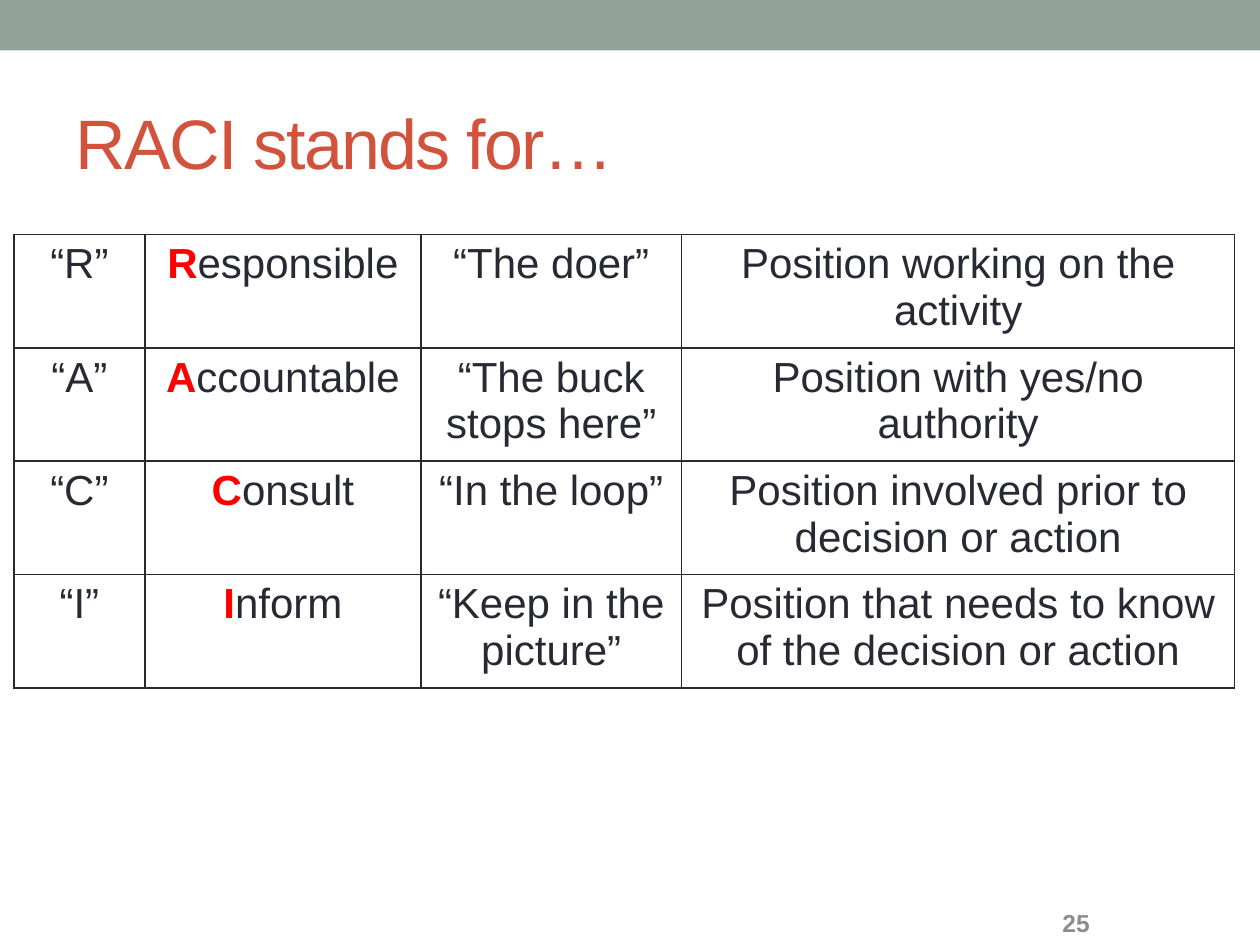
from lxml import etree
from pptx import Presentation
from pptx.dml.color import RGBColor
from pptx.enum import shapes, text
from pptx.oxml.ns import qn
from pptx.util import Pt

FONT = "Arial"
INK = "292934"
RED = "FF0000"
COLUMN_WIDTHS = [74.9, 157.7, 149, 316.1]
ROW_HEIGHT = 60.75
ROLES = [
    ("Responsible", "“The doer”", "Position working on the activity"),
    ("Accountable", "“The buck stops here”", "Position with yes/no authority"),
    ("Consult", "“In the loop”", "Position involved prior to decision or action"),
    ("Inform", "“Keep in the picture”",
     "Position that needs to know of the decision or action"),
]


def color(hex_code):
    return RGBColor.from_string(hex_code)


def format_span(span, size, hex_code, bold=False):
    span.font.name = FONT
    span.font.size = Pt(size)
    span.font.bold = bold
    span.font.color.rgb = color(hex_code)


def place(shape, left, top, width, height):
    shape.left, shape.top = Pt(left), Pt(top)
    shape.width, shape.height = Pt(width), Pt(height)


def add_band(page):
    band = page.shapes.add_shape(
        shapes.MSO_SHAPE.RECTANGLE, 0, 0, Pt(720), Pt(28.8))
    band.shadow.inherit = False
    band.fill.solid()
    band.fill.fore_color.rgb = color("93A299")
    band.line.fill.background()


def set_title(page, wording):
    title = page.shapes.title
    place(title, 36, 41.8, 648, 77.8)
    frame = title.text_frame
    frame.text = wording
    frame.word_wrap = True
    frame.vertical_anchor = text.MSO_ANCHOR.MIDDLE
    para = frame.paragraphs[0]
    para.alignment = text.PP_ALIGN.LEFT
    format_span(para.runs[0], 40, "D2533C")
    for properties in title.element.iter(qn("a:rPr")):
        properties.set("spc", "-100")


def add_page_number(page, number):
    box = page.shapes.add_textbox(Pt(600), Pt(514.1), Pt(84), Pt(25.9))
    frame = box.text_frame
    frame.word_wrap = True
    frame.vertical_anchor = text.MSO_ANCHOR.MIDDLE
    frame.text = number
    format_span(frame.paragraphs[0].runs[0], 14, "8C8C8C", bold=True)


def fill_cell(cell, wording, initial=""):
    """Write centred text, led by an optional bold red initial."""
    cell.fill.background()
    para = cell.text_frame.paragraphs[0]
    para.alignment = text.PP_ALIGN.CENTER
    if initial:
        span = para.add_run()
        span.text = initial
        format_span(span, 24, RED, bold=True)
    span = para.add_run()
    span.text = wording
    format_span(span, 24, INK)


def draw_borders(table_frame):
    for properties in table_frame.element.iter(qn("a:tcPr")):
        for position, side in enumerate(("lnL", "lnR", "lnT", "lnB")):
            line = etree.Element(qn(f"a:{side}"), w=str(Pt(1)))
            fill = etree.SubElement(line, qn("a:solidFill"))
            etree.SubElement(fill, qn("a:srgbClr"), val=INK)
            properties.insert(position, line)


def add_role_table(page):
    table_frame = page.shapes.add_table(
        len(ROLES), len(COLUMN_WIDTHS), Pt(7.9), Pt(133.9),
        Pt(sum(COLUMN_WIDTHS)), Pt(ROW_HEIGHT * len(ROLES)))
    table = table_frame.table
    table.first_row = False
    table.horz_banding = False
    for column, width in zip(table.columns, COLUMN_WIDTHS):
        column.width = Pt(width)
    for row, (role, nickname, meaning) in zip(table.rows, ROLES):
        row.height = Pt(ROW_HEIGHT)
        letter_cell, role_cell, nickname_cell, meaning_cell = row.cells
        fill_cell(letter_cell, f"“{role[0]}”")
        fill_cell(role_cell, role[1:], initial=role[0])
        fill_cell(nickname_cell, nickname)
        fill_cell(meaning_cell, meaning)
    draw_borders(table_frame)


def main():
    deck = Presentation()
    deck.slide_width, deck.slide_height = Pt(720), Pt(540)
    page = deck.slides.add_slide(deck.slide_layouts.get_by_name("Title Only"))
    add_band(page)
    set_title(page, "RACI stands for…")
    add_page_number(page, "25")
    add_role_table(page)
    deck.save("out.pptx")


if __name__ == "__main__":
    main()
